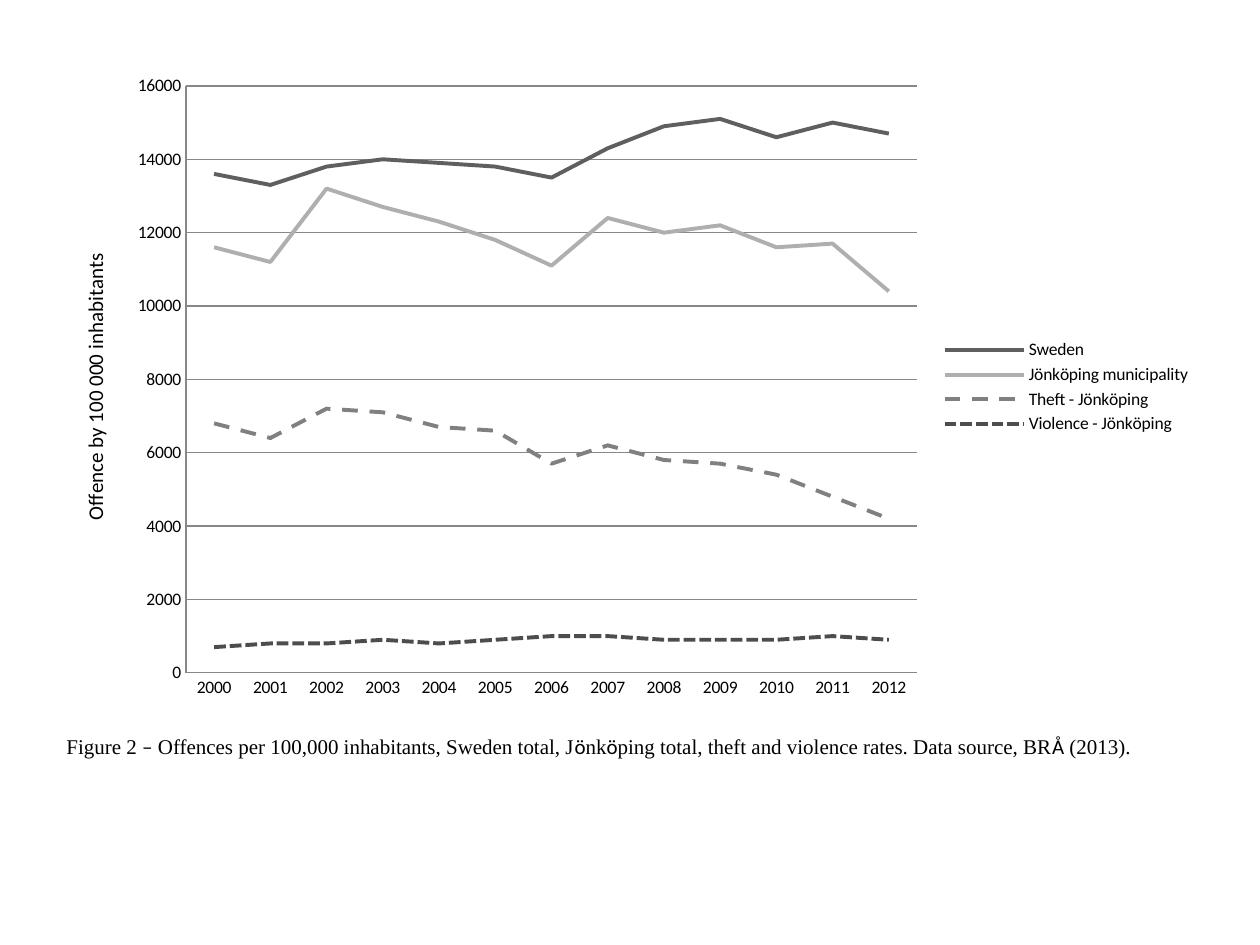
"""Build a slide with a line chart of offence rates and its caption."""
from itertools import groupby

from lxml.etree import SubElement
from pptx import Presentation
from pptx.chart.data import CategoryChartData
from pptx.dml.color import RGBColor
from pptx.enum.chart import XL_CHART_TYPE as ChartType
from pptx.enum.chart import XL_LEGEND_POSITION as LegendPosition
from pptx.enum.chart import XL_TICK_MARK as TickMark
from pptx.enum.dml import MSO_LINE as Dash
from pptx.enum.text import MSO_ANCHOR as Anchor
from pptx.oxml.ns import qn
from pptx.util import Emu, Pt

YEARS = [str(year) for year in range(2000, 2013)]
SERIES = [
    ("Sweden", "5F5F5F", Dash.SOLID,
     [13600, 13300, 13800, 14000, 13900, 13800, 13500, 14300, 14900, 15100, 14600, 15000, 14700]),
    ("Jönköping municipality", "AFAFAF", Dash.SOLID,
     [11600, 11200, 13200, 12700, 12300, 11800, 11100, 12400, 12000, 12200, 11600, 11700, 10400]),
    ("Theft - Jönköping", "808080", Dash.DASH,
     [6800, 6400, 7200, 7100, 6700, 6600, 5700, 6200, 5800, 5700, 5400, 4800, 4200]),
    ("Violence - Jönköping", "4D4D4D", Dash.SQUARE_DOT,
     [700, 800, 800, 900, 800, 900, 1000, 1000, 900, 900, 900, 1000, 900]),
]
AXIS_TITLE = "Offence by 100 000 inhabitants"
CAPTION = ("Figure 2 – Offences per 100,000 inhabitants, Sweden total, Jönköping total, "
           "theft and violence rates. Data source, BRÅ (2013).")

THEME = {
    "text": "000000", "grid": "878787",
    "sans": "Calibri", "serif": "Times New Roman",
    "label": 10, "title": 12, "thin": 0.75, "thick": 2.25,
}
SLIDE = (1260, 945)
CHART = (54, 63, 1150, 648)
PLOT = (186, 86, 731, 587)
CAPTION_BOX = (54, 727, 1111, 38)


def px(length):
    return Emu(round(length * 914400 / 126))


def style_font(font, size, name, bold=False):
    formats = {"size": Pt(size), "name": name, "bold": bold}
    for attribute, value in formats.items():
        setattr(font, attribute, value)
    font.color.rgb = RGBColor.from_string(THEME["text"])


def style_line(line, color, width, dash=Dash.SOLID):
    line.color.rgb = RGBColor.from_string(color)
    line.width = Pt(width)
    line.dash_style = dash


def place_plot(chart):
    plot_area = chart._chartSpace.chart.plotArea
    for old_layout in plot_area.findall(qn("c:layout")):
        plot_area.remove(old_layout)
    layout = SubElement(plot_area, qn("c:layout"))
    plot_area.insert(0, layout)
    manual = SubElement(layout, qn("c:manualLayout"))
    left, top, width, height = CHART
    values = {
        "layoutTarget": "inner", "xMode": "edge", "yMode": "edge",
        "x": (PLOT[0] - left) / width, "y": (PLOT[1] - top) / height,
        "w": PLOT[2] / width, "h": PLOT[3] / height,
    }
    for tag, value in values.items():
        SubElement(manual, qn(f"c:{tag}")).set("val", str(value))


def add_offence_chart(slide):
    data = CategoryChartData()
    data.categories = YEARS
    for name, _, _, values in SERIES:
        data.add_series(name, values)
    chart = slide.shapes.add_chart(ChartType.LINE, *map(px, CHART), data).chart
    style_font(chart.font, THEME["label"], THEME["sans"])
    chart.has_title = False
    chart.has_legend = True
    chart.legend.position = LegendPosition.RIGHT
    chart.legend.include_in_layout = False
    chart.plots[0].vary_by_categories = False
    for series, (_, color, dash, _) in zip(chart.plots[0].series, SERIES):
        series.smooth = False
        style_line(series.format.line, color, THEME["thick"], dash)

    for axis in (chart.category_axis, chart.value_axis):
        axis.major_tick_mark = axis.minor_tick_mark = TickMark.NONE
        style_line(axis.format.line, THEME["grid"], THEME["thin"])
    value_axis = chart.value_axis
    scale = {"minimum_scale": 0, "maximum_scale": 16000, "major_unit": 2000}
    for attribute, value in scale.items():
        setattr(value_axis, attribute, value)
    style_line(value_axis.major_gridlines.format.line, THEME["grid"], THEME["thin"])
    frame = value_axis.axis_title.text_frame
    frame.text = AXIS_TITLE
    style_font(frame.paragraphs[0].runs[0].font, THEME["title"], THEME["sans"])
    place_plot(chart)


def add_caption(slide):
    frame = slide.shapes.add_textbox(*map(px, CAPTION_BOX)).text_frame
    frame.word_wrap = True
    frame.vertical_anchor = Anchor.MIDDLE
    paragraph = frame.paragraphs[0]
    for is_ascii, characters in groupby(CAPTION, str.isascii):
        run = paragraph.add_run()
        run.text = "".join(characters)
        style_font(run.font, THEME["title"], THEME["serif" if is_ascii else "sans"])


def main():
    presentation = Presentation()
    presentation.slide_width, presentation.slide_height = map(px, SLIDE)
    slide = presentation.slides.add_slide(presentation.slide_layouts[6])
    add_offence_chart(slide)
    add_caption(slide)
    presentation.save("out.pptx")


if __name__ == "__main__":
    main()
